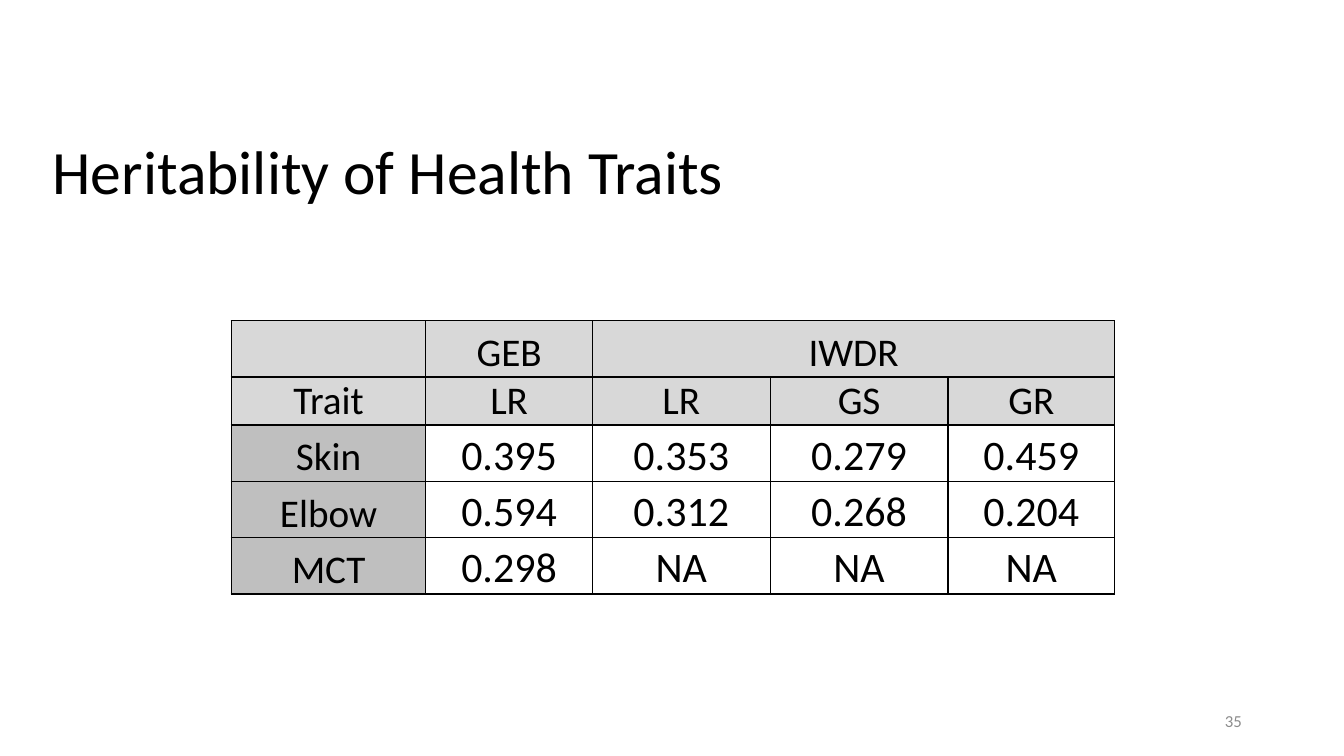
"""Build the slide on heritability of health traits."""
from lxml import etree
from pptx import Presentation
from pptx.dml.color import RGBColor
from pptx.enum import text
from pptx.oxml import ns
from pptx.util import Cm, Pt

TITLE = "Heritability of Health Traits"
SLIDE_NUMBER = "35"
ROWS = [
    ("", "GEB", "IWDR", "", ""),
    ("Trait", "LR", "LR", "GS", "GR"),
    ("Skin", "0.395", "0.353", "0.279", "0.459"),
    ("Elbow", "0.594", "0.312", "0.268", "0.204"),
    ("MCT", "0.298", "NA", "NA", "NA"),
]
HEADER_ROWS = 2
COLUMN_WIDTHS = (4.9, 4.2, 4.48, 4.48, 4.2)
ROW_HEIGHTS = (1.42, 0.46, 1.42, 1.42, 1.42)
TABLE_LEFT, TABLE_TOP = 5.83, 8.08

BLACK = RGBColor(0x00, 0x00, 0x00)
GRAY = RGBColor(0x8C, 0x8C, 0x8C)
HEADER_FILL = RGBColor(0xD8, 0xD8, 0xD8)
TRAIT_FILL = RGBColor(0xBF, 0xBF, 0xBF)

TITLE_BOX = dict(left=Cm(1.07), top=Cm(1.68), width=Cm(31.72), height=Cm(3.68))
NUMBER_BOX = dict(left=Cm(23.93), top=Cm(17.65), width=Cm(7.62), height=Cm(1.02))
CELL_FORMAT = dict(margin_left=0, margin_right=0, margin_top=0, margin_bottom=0,
                   vertical_anchor=text.MSO_ANCHOR.BOTTOM)


def apply(target, values):
    for name, value in values.items():
        setattr(target, name, value)


def write(frame, content, size, color, **paragraph_format):
    paragraph = frame.paragraphs[0]
    apply(paragraph, paragraph_format)
    run = paragraph.add_run()
    run.text = content
    apply(run.font, dict(size=Pt(size), name="Calibri"))
    run.font.color.rgb = color


def add_borders(cell):
    properties = cell._tc.get_or_add_tcPr()
    for position, side in enumerate("LRTB"):
        line = etree.Element(ns.qn(f"a:ln{side}"), w=str(Pt(1)))
        fill = etree.SubElement(line, ns.qn("a:solidFill"))
        etree.SubElement(fill, ns.qn("a:srgbClr"), val=str(BLACK))
        properties.insert(position, line)


def format_cell(cell, content, row, column):
    apply(cell, CELL_FORMAT)
    is_label = row < HEADER_ROWS or column == 0
    if is_label:
        cell.fill.solid()
        cell.fill.fore_color.rgb = HEADER_FILL if row < HEADER_ROWS else TRAIT_FILL
    else:
        cell.fill.background()
    add_borders(cell)
    if content:
        write(cell.text_frame, content, 28 if is_label else 30, BLACK,
              alignment=text.PP_ALIGN.CENTER)


def add_trait_table(slide):
    table = slide.shapes.add_table(
        len(ROWS), len(COLUMN_WIDTHS), Cm(TABLE_LEFT), Cm(TABLE_TOP),
        Cm(sum(COLUMN_WIDTHS)), Cm(sum(ROW_HEIGHTS))).table
    apply(table, dict(first_row=False, horz_banding=False))
    for column, width in zip(table.columns, COLUMN_WIDTHS):
        column.width = Cm(width)
    for row, height in zip(table.rows, ROW_HEIGHTS):
        row.height = Cm(height)
    for row, values in enumerate(ROWS):
        for column, content in enumerate(values):
            format_cell(table.cell(row, column), content, row, column)
    table.cell(0, 2).merge(table.cell(0, 4))


def main():
    presentation = Presentation()
    apply(presentation, dict(slide_width=Cm(33.87), slide_height=Cm(19.05)))
    slide = presentation.slides.add_slide(presentation.slide_layouts[5])

    title = slide.shapes.title
    apply(title, TITLE_BOX)
    apply(title.text_frame, dict(vertical_anchor=text.MSO_ANCHOR.BOTTOM, word_wrap=True,
                                 auto_size=text.MSO_AUTO_SIZE.NONE))
    write(title.text_frame, TITLE, 44, BLACK,
          alignment=text.PP_ALIGN.LEFT, line_spacing=0.9)

    add_trait_table(slide)

    number = slide.shapes.add_textbox(**NUMBER_BOX)
    apply(number.text_frame, dict(vertical_anchor=text.MSO_ANCHOR.MIDDLE, word_wrap=True))
    write(number.text_frame, SLIDE_NUMBER, 12, GRAY, alignment=text.PP_ALIGN.RIGHT)

    presentation.save("out.pptx")


if __name__ == "__main__":
    main()
